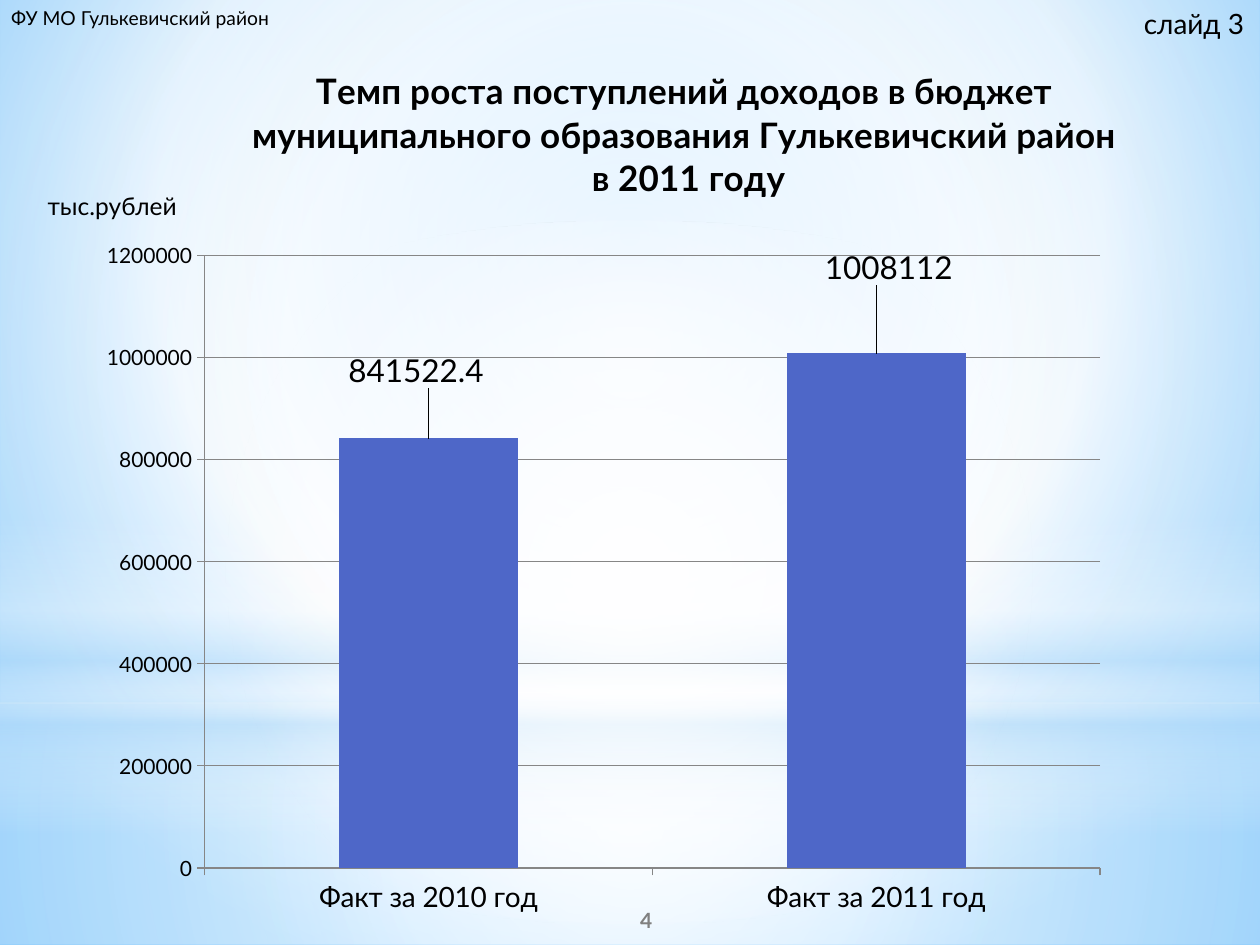
from pptx import Presentation
from pptx.chart.data import CategoryChartData
from pptx.dml.color import RGBColor
from pptx.enum.chart import XL_CHART_TYPE, XL_LABEL_POSITION, XL_TICK_MARK
from pptx.enum.shapes import MSO_SHAPE
from pptx.enum.text import MSO_ANCHOR, MSO_AUTO_SIZE, PP_ALIGN
from pptx.oxml import parse_xml
from pptx.oxml.ns import nsdecls
from pptx.util import Inches, Pt

COLUMN = XL_CHART_TYPE.COLUMN_CLUSTERED
ABOVE = XL_LABEL_POSITION.OUTSIDE_END
OUT, NONE = XL_TICK_MARK.OUTSIDE, XL_TICK_MARK.NONE
RECT, OVAL = MSO_SHAPE.RECTANGLE, MSO_SHAPE.OVAL
MIDDLE, CENTER = MSO_ANCHOR.MIDDLE, PP_ALIGN.CENTER
GROW, FIXED = MSO_AUTO_SIZE.SHAPE_TO_FIT_TEXT, MSO_AUTO_SIZE.NONE
FONT = "Lato"
HEX = {"ink": "000000", "page": "808080", "bar": "4E67C8", "line": "868686",
       "white": "FFFFFF", "pale": "B4DCFA", "sky": "9ED5FF", "deep": "5BB9FF"}
MID = (50, 50, 50, 50)
TITLE = ("Темп роста поступлений доходов в бюджет ",
         "муниципального образования Гулькевичский район ",
         "в 2011 году")


def rgb(name):
    """Return a named colour."""
    return RGBColor.from_string(HEX[name])


def style(obj, values):
    """Set each attribute of an object from a dict."""
    for key, value in values.items():
        setattr(obj, key, value)


def ink(font, size, color="ink", bold=False):
    """Format a font."""
    style(font, {"name": FONT, "size": Pt(size), "bold": bold})
    font.color.rgb = rgb(color)


def blend(fill, node, stops, focus=None):
    """Give a fill a radial gradient round a focus, or a vertical one."""
    fill.solid()
    marks = "".join(
        f'<a:gs pos="{pos * 1000}"><a:srgbClr val="{HEX[name]}">'
        f'<a:alpha val="{alpha * 1000}"/></a:srgbClr></a:gs>'
        for pos, name, alpha in stops)
    if focus:
        sides = " ".join(f'{s}="{v * 1000}"' for s, v in zip("ltrb", focus))
        way = f'<a:path path="circle"><a:fillToRect {sides}/></a:path>'
    else:
        way = '<a:lin ang="5400000" scaled="0"/>'
    old = node.xpath(".//a:solidFill")[0]
    old.getparent().replace(old, parse_xml(
        f'<a:gradFill {nsdecls("a")} rotWithShape="1">'
        f'<a:gsLst>{marks}</a:gsLst>{way}</a:gradFill>'))


def glow(slide, kind, box, stops, focus=None):
    """Add a soft gradient shape without outline."""
    shape = slide.shapes.add_shape(kind, *map(Inches, box))
    shape.shadow.inherit = False
    blend(shape.fill, shape._element.spPr, stops, focus)
    shape.line.fill.background()


def backdrop(slide, box):
    """Paint the background and its light layers within a box."""
    left, top, width, height = box
    back = slide.background.fill
    blend(back, slide._element.cSld.bg,
          [(0, "sky", 100), (60, "white", 100), (100, "deep", 100)],
          (20, 10, 20, 60))
    split = 5.58
    glow(slide, RECT, (left, top + split, width, height - split),
         [(0, "white", 91), (37, "white", 76), (100, "pale", 79)], MID)
    glow(slide, RECT, (left, top, width, split),
         [(0, "white", 89), (48, "white", 62), (100, "pale", 79)], MID)
    glow(slide, RECT, (left, top + 4.12, width, 2.5),
         [(0, "white", 0), (29, "white", 30), (45, "pale", 40),
          (55, "white", 26), (65, "pale", 60), (100, "white", 0)])
    glow(slide, OVAL, (left, top + 1.75, width, split),
         [(0, "white", 100), (56, "white", 0)], MID)


def label(slide, box, text, size, color="ink", bold=False, frame=None, align=None):
    """Add one line of text."""
    body = slide.shapes.add_textbox(*map(Inches, box)).text_frame
    style(body, {"word_wrap": False, "auto_size": GROW, **(frame or {})})
    line = body.paragraphs[0]
    line.alignment = align
    run = line.add_run()
    run.text = text
    ink(run.font, size, color, bold)


def layout(**parts):
    """Build a manual chart layout."""
    items = "".join(f'<c:{k} val="{v}"/>' for k, v in parts.items())
    return parse_xml(f'<c:layout {nsdecls("c")}>'
                     f'<c:manualLayout>{items}</c:manualLayout></c:layout>')


def place(node, spot, after):
    """Put a layout after a child, in place of any present one."""
    for old in node.xpath("./c:layout"):
        node.remove(old)
    if after:
        node.xpath(f"./c:{after}")[0].addnext(spot)
    else:
        node.insert(0, spot)


def heading(chart):
    """Write the chart title."""
    title = chart.chart_title
    frame = title.text_frame
    for i, text in enumerate(TITLE):
        line = frame.add_paragraph() if i else frame.paragraphs[0]
        run = line.add_run()
        run.text = text
        ink(run.font, 20, bold=True)
    place(title._element, layout(xMode="edge", yMode="edge", x=0.2, y=0.02), "tx")
    title.include_text_in_layout = False


def income(slide, box):
    """Add the column chart of income."""
    data = CategoryChartData()
    data.categories = ["Факт за 2010 год", "Факт за 2011 год"]
    data.add_series("Series 1", (841522.4, 1008112))
    chart = slide.shapes.add_chart(COLUMN, *map(Inches, box), data).chart
    chart.has_legend = False
    ink(chart.font, 18)
    heading(chart)
    for axis, size in ((chart.category_axis, 16), (chart.value_axis, 12)):
        style(axis, {"major_tick_mark": OUT, "minor_tick_mark": NONE})
        ink(axis.tick_labels.font, size)
        axis.format.line.color.rgb = rgb("line")
    scale = chart.value_axis
    style(scale, {"minimum_scale": 0, "maximum_scale": 1200000,
                  "major_unit": 200000, "has_major_gridlines": True})
    scale.major_gridlines.format.line.color.rgb = rgb("line")
    plot = chart.plots[0]
    style(plot, {"gap_width": 150, "vary_by_categories": False})
    series = plot.series[0]
    series.format.fill.solid()
    series.format.fill.fore_color.rgb = rgb("bar")
    marks = series.data_labels
    style(marks, {"show_value": True, "position": ABOVE})
    ink(marks.font, 18)
    for i, (x, y) in enumerate(((-0.01, -0.05), (0.01, -0.07))):
        mark = series.points[i].data_label
        mark.position = ABOVE
        ink(mark.font, 18)
        node = series._element.xpath(f"./c:dLbls/c:dLbl[c:idx/@val='{i}']")[0]
        place(node, layout(x=x, y=y), "idx")
    area = chart._chartSpace.xpath(".//c:plotArea")[0]
    place(area, layout(layoutTarget="inner", xMode="edge", yMode="edge",
                       x=0.165, y=0.235, w=0.718, h=0.686), None)


def main():
    """Build and save the slide."""
    deck = Presentation()
    style(deck, {"slide_width": Inches(10), "slide_height": Inches(7.5)})
    slide = deck.slides.add_slide(deck.slide_layouts[6])
    backdrop(slide, (0, 0, 10, 7.5))
    label(slide, (-0.01, 0, 1.73, 0.24), "ФУ МО Гулькевичский район", 11,
          frame={"auto_size": FIXED})
    income(slide, (-0.01, 0.36, 9.9, 7.09))
    label(slide, (8.98, 0, 1.02, 0.37), "слайд 3", 16)
    label(slide, (0.28, 1.47, 1.24, 0.34), "тыс.рублей", 14)
    label(slide, (4.13, 7.1, 2, 0.4), "4", 12, "page", True,
          {"word_wrap": True, "auto_size": FIXED, "vertical_anchor": MIDDLE}, CENTER)
    deck.save("out.pptx")


if __name__ == "__main__":
    main()
